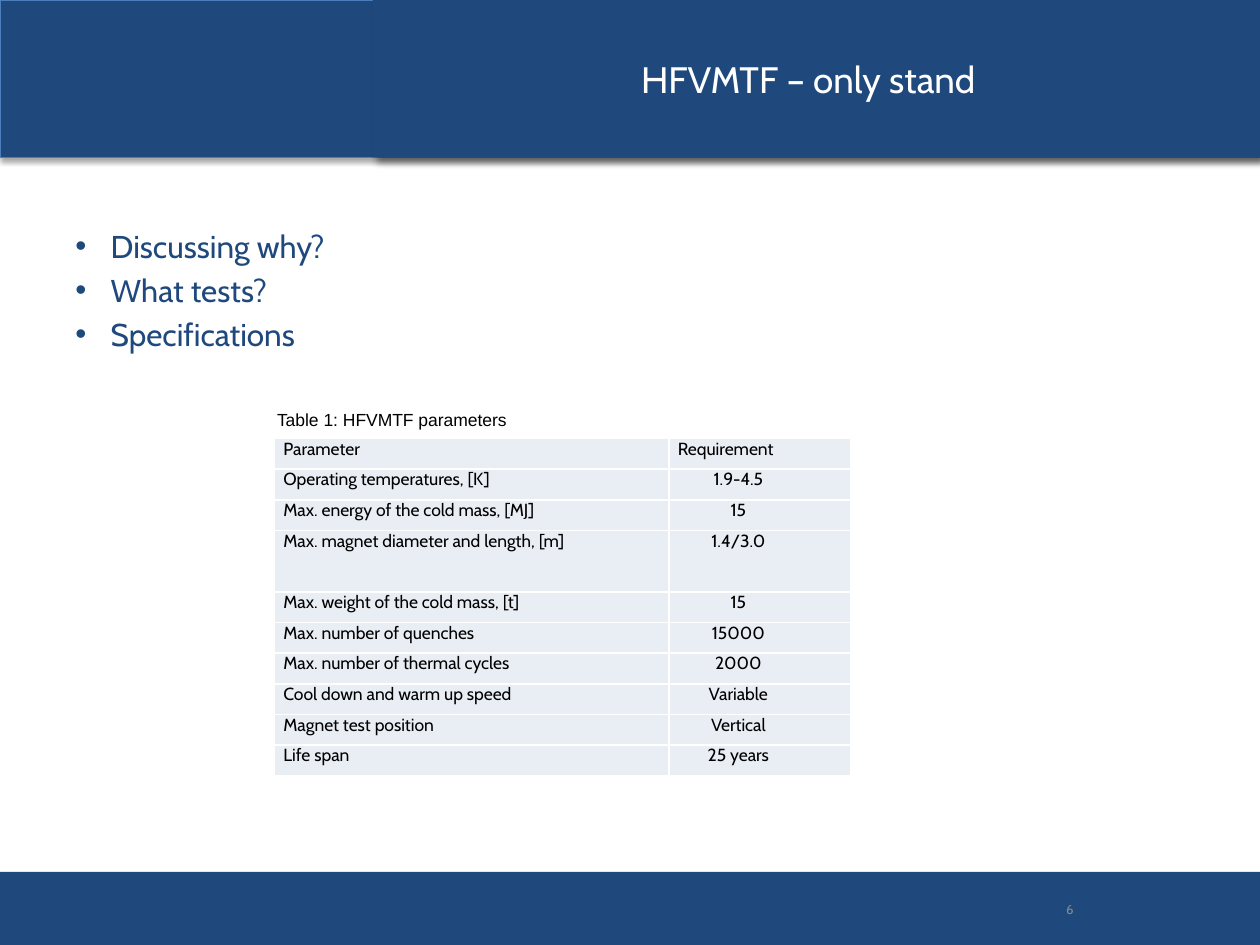
from dataclasses import dataclass

from lxml import etree
from pptx import Presentation
from pptx.dml.color import RGBColor
from pptx.enum.shapes import MSO_SHAPE
from pptx.enum.text import MSO_ANCHOR, PP_ALIGN
from pptx.oxml.ns import qn
from pptx.util import Inches, Pt

RECTANGLE = MSO_SHAPE.RECTANGLE
TOP, MIDDLE = MSO_ANCHOR.TOP, MSO_ANCHOR.MIDDLE
LEFT, CENTER, RIGHT = PP_ALIGN.LEFT, PP_ALIGN.CENTER, PP_ALIGN.RIGHT


@dataclass(frozen=True)
class Theme:
    navy: str = "1F497D"
    outline: str = "4B7EBC"
    white: str = "FFFFFF"
    black: str = "000000"
    gray: str = "898989"
    cell: str = "E9EDF4"
    font: str = "Cabin"
    caption_font: str = "Arial"
    title_size: float = 21
    body_size: float = 18
    table_size: float = 10
    number_size: float = 7.5


@dataclass(frozen=True)
class Box:
    left: float
    top: float
    width: float
    height: float

    def lengths(self) -> tuple:
        return tuple(Inches(side) for side in (self.left, self.top, self.width, self.height))


@dataclass(frozen=True)
class Shadow:
    opacity: int
    blur: float
    distance: float
    direction: int


@dataclass(frozen=True)
class Parameter:
    name: str
    requirement: str
    row_units: int = 1


THEME = Theme()
HEADER = Box(0, 0, 10, 1.25)
TITLE = Box(2.96, 0, 7.04, 1.25)
FOOTER = Box(0, 6.92, 10, 0.58)
TOPICS = Box(0.5, 1.75, 9, 1.44)
CAPTION = Box(2.1, 3.19, 4.65, 0.28)
TABLE = Box(2.18, 3.48, 4.57, 2.68)
PAGE_NUMBER = Box(8.05, 7.02, 0.57, 0.4)
NAME_WIDTH = 3.13

TOPIC_TEXTS = ["Discussing why?", "What tests?", "Specifications"]
PARAMETERS = [
    Parameter("Parameter", "Requirement"),
    Parameter("Operating temperatures, [K]", "1.9-4.5"),
    Parameter("Max. energy of the cold mass, [MJ]", "15"),
    Parameter("Max. magnet diameter and length, [m]", "1.4/3.0", 2),
    Parameter("Max. weight of the cold mass, [t]", "15"),
    Parameter("Max. number of quenches", "15000"),
    Parameter("Max. number of thermal cycles", "2000"),
    Parameter("Cool down and warm up speed", "Variable"),
    Parameter("Magnet test position", "Vertical"),
    Parameter("Life span", "25 years"),
]


def fill_with(target, color: str) -> None:
    target.fill.solid()
    target.fill.fore_color.rgb = RGBColor.from_string(color)


def style(paragraph, size: float, color: str, align=LEFT, font: str = THEME.font) -> None:
    paragraph.alignment = align
    paragraph.font.name = font
    paragraph.font.size = Pt(size)
    paragraph.font.color.rgb = RGBColor.from_string(color)


def add_shadow(shape, shadow: Shadow) -> None:
    shape.shadow.inherit = False
    effects = shape.element.spPr.find(qn("a:effectLst"))
    outer = etree.SubElement(
        effects, qn("a:outerShdw"), blurRad=str(Pt(shadow.blur)),
        dist=str(Pt(shadow.distance)), dir=str(shadow.direction * 60000),
        algn="ctr", rotWithShape="0")
    color = etree.SubElement(outer, qn("a:srgbClr"), val=THEME.black)
    etree.SubElement(color, qn("a:alpha"), val=str(shadow.opacity * 1000))


def add_band(slide, box: Box):
    shape = slide.shapes.add_shape(RECTANGLE, *box.lengths())
    shape.shadow.inherit = False
    fill_with(shape, THEME.navy)
    shape.line.fill.background()
    return shape


def add_text(slide, box: Box, texts: list[str], anchor=TOP):
    frame = slide.shapes.add_textbox(*box.lengths()).text_frame
    frame.word_wrap = True
    frame.vertical_anchor = anchor
    frame.text = "\n".join(texts)
    return frame.paragraphs


def add_bullet(paragraph) -> None:
    properties = paragraph._p.get_or_add_pPr()
    properties.set("marL", str(Inches(0.28)))
    properties.set("indent", str(Inches(-0.28)))
    etree.SubElement(properties, qn("a:buFont"), typeface=THEME.caption_font)
    etree.SubElement(properties, qn("a:buChar"), char="•")


def format_title(slide) -> None:
    title = slide.shapes.title
    title.left, title.top, title.width, title.height = TITLE.lengths()
    fill_with(title, THEME.navy)
    add_shadow(title, Shadow(43, 4, 3, 45))
    frame = title.text_frame
    frame.text = "HFVMTF – only stand"
    frame.vertical_anchor = MIDDLE
    frame.margin_right = Inches(0.23)
    style(frame.paragraphs[0], THEME.title_size, THEME.white, CENTER)
    slide.shapes.element.append(title.element)


def format_cell(cell, text: str, align, right_margin: float) -> None:
    cell.text = text
    cell.margin_left, cell.margin_right = Inches(0.07), Inches(right_margin)
    cell.margin_top = cell.margin_bottom = 0
    paragraph = cell.text_frame.paragraphs[0]
    paragraph.space_after = Pt(1)
    style(paragraph, THEME.table_size, THEME.black, align)
    properties = cell._tc.get_or_add_tcPr()
    for side in ("lnL", "lnR", "lnT", "lnB"):
        border = etree.SubElement(properties, qn(f"a:{side}"), w=str(Pt(1)))
        solid = etree.SubElement(border, qn("a:solidFill"))
        etree.SubElement(solid, qn("a:srgbClr"), val=THEME.white)
    fill_with(cell, THEME.cell)


def add_parameter_table(slide) -> None:
    table = slide.shapes.add_table(len(PARAMETERS), 2, *TABLE.lengths()).table
    table.columns[0].width = Inches(NAME_WIDTH)
    table.columns[1].width = Inches(TABLE.width - NAME_WIDTH)
    unit = TABLE.height / sum(parameter.row_units for parameter in PARAMETERS)
    for index, parameter in enumerate(PARAMETERS):
        table.rows[index].height = Inches(unit * parameter.row_units)
        format_cell(table.cell(index, 0), parameter.name, LEFT, 0.07)
        align, margin = (CENTER, 0.41) if index else (LEFT, 0.07)
        format_cell(table.cell(index, 1), parameter.requirement, align, margin)


def main() -> None:
    presentation = Presentation()
    presentation.slide_width, presentation.slide_height = Inches(10), Inches(7.5)
    slide = presentation.slides.add_slide(presentation.slide_layouts[5])

    add_band(slide, FOOTER)
    header = add_band(slide, HEADER)
    header.line.color.rgb = RGBColor.from_string(THEME.outline)
    header.line.width = Pt(0.75)
    add_shadow(header, Shadow(35, 3.1, 1.8, 90))
    format_title(slide)

    for index, paragraph in enumerate(add_text(slide, TOPICS, TOPIC_TEXTS)):
        if index:
            paragraph.space_before = Pt(3.6)
        add_bullet(paragraph)
        style(paragraph, THEME.body_size, THEME.navy)

    number = add_text(slide, PAGE_NUMBER, ["6"], MIDDLE)[0]
    style(number, THEME.number_size, THEME.gray, RIGHT)
    add_parameter_table(slide)
    caption = add_text(slide, CAPTION, ["Table 1: HFVMTF parameters"], MIDDLE)[0]
    style(caption, THEME.table_size, THEME.black, font=THEME.caption_font)

    presentation.save("out.pptx")


if __name__ == "__main__":
    main()
